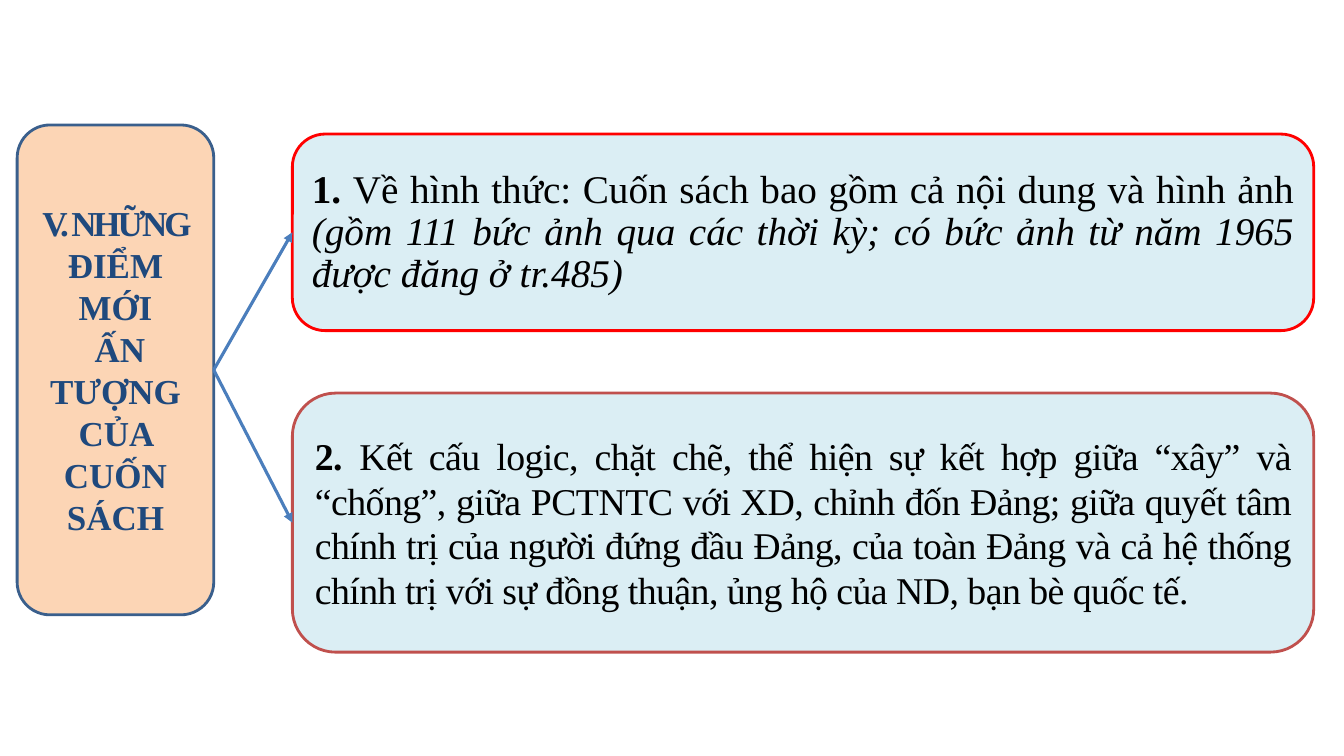
from pptx import Presentation
from pptx.dml.color import RGBColor
from pptx.enum.shapes import MSO_CONNECTOR, MSO_SHAPE
from pptx.enum.text import MSO_ANCHOR, PP_ALIGN
from pptx.oxml.ns import qn
from pptx.util import Inches, Pt
from lxml import etree

ROUNDED, STRAIGHT = MSO_SHAPE.ROUNDED_RECTANGLE, MSO_CONNECTOR.STRAIGHT
CENTER, JUSTIFY, MIDDLE = PP_ALIGN.CENTER, PP_ALIGN.JUSTIFY, MSO_ANCHOR.MIDDLE

THEME = {
    "font": "Times New Roman",
    "topic": {"fill": "FCD5B5", "line": "3A5F8C", "text": "1F497D", "size": 25},
    "form": {"fill": "DBEEF4", "line": "FF0000", "text": "000000", "size": 28},
    "structure": {"fill": "DBEEF4", "line": "C0504D", "text": "000000", "size": 27},
    "arrow": "4B7EBC",
    "border_width": 2,
    "arrow_width": 2.25,
}

# Each paragraph is a list of spans: (text, bold, italic, letter spacing in points)
TOPIC = {
    "style": "topic", "at": (0.17, 1.24, 1.95, 4.86), "align": CENTER, "leading": None,
    "paragraphs": [
        [("V. NHỮNG ", True, False, -2.2), ("ĐIỂM MỚI", True, False, 0)],
        [(" ẤN TƯỢNG CỦA CUỐN SÁCH", True, False, 0)],
    ],
}
POINTS = [
    {
        "style": "form", "at": (2.9, 1.33, 10.13, 1.95), "align": JUSTIFY, "leading": 30,
        "paragraphs": [[
            ("1. ", True, False, 0),
            ("Về hình thức: Cuốn sách bao gồm cả nội dung và hình ảnh ", False, False, 0),
            ("(gồm 111 bức ảnh qua các thời kỳ; có bức ảnh từ năm 1965 được đăng ở tr.485)",
             False, True, 0),
        ]],
    },
    {
        "style": "structure", "at": (2.9, 3.9, 10.13, 2.57), "align": JUSTIFY, "leading": 32,
        "paragraphs": [[
            ("2. ", True, False, -0.4),
            ("Kết cấu logic, chặt chẽ, thể hiện sự kết hợp giữa “xây” và “chống”, giữa PCTNTC "
             "với XD, chỉnh đốn Đảng; giữa quyết tâm chính trị của người đứng đầu Đảng, của toàn "
             "Đảng và cả hệ thống chính trị với sự đồng thuận, ủng hộ của ND, bạn bè quốc tế.",
             False, False, -0.4),
        ]],
    },
]


def color(code):
    return RGBColor.from_string(code)


def add_span(para, span, style):
    text, bold, italic, spacing = span
    run = para.add_run()
    run.text = text
    font = run.font
    font.name, font.size = THEME["font"], Pt(style["size"])
    font.bold, font.italic = bold, italic
    font.color.rgb = color(style["text"])
    if spacing:
        run._r.get_or_add_rPr().set("spc", str(round(spacing * 100)))


def add_box(page, content):
    style = THEME[content["style"]]
    box = page.shapes.add_shape(ROUNDED, *map(Inches, content["at"]))
    box.shadow.inherit = False
    box.fill.solid()
    box.fill.fore_color.rgb = color(style["fill"])
    box.line.color.rgb = color(style["line"])
    box.line.width = Pt(THEME["border_width"])
    frame = box.text_frame
    frame.word_wrap = True
    frame.vertical_anchor = MIDDLE
    for index, spans in enumerate(content["paragraphs"]):
        para = frame.add_paragraph() if index else frame.paragraphs[0]
        para.alignment = content["align"]
        if content["leading"]:
            para.line_spacing = Pt(content["leading"])
        for span in spans:
            add_span(para, span, style)
    return box


def add_arrow(page, source, target):
    """Join the right middle of source to the left middle of target."""
    arrow = page.shapes.add_connector(
        STRAIGHT,
        source.left + source.width, source.top + source.height // 2,
        target.left, target.top + target.height // 2)
    arrow.line.color.rgb = color(THEME["arrow"])
    arrow.line.width = Pt(THEME["arrow_width"])
    etree.SubElement(arrow.line._get_or_add_ln(), qn("a:tailEnd"), type="triangle")
    etree.SubElement(arrow._element.spPr, qn("a:effectLst"))


def main():
    deck = Presentation()
    deck.slide_width, deck.slide_height = Inches(13.33), Inches(7.5)
    page = deck.slides.add_slide(deck.slide_layouts[6])
    topic = add_box(page, TOPIC)
    for point in POINTS:
        add_arrow(page, topic, add_box(page, point))
    deck.save("out.pptx")


if __name__ == "__main__":
    main()
